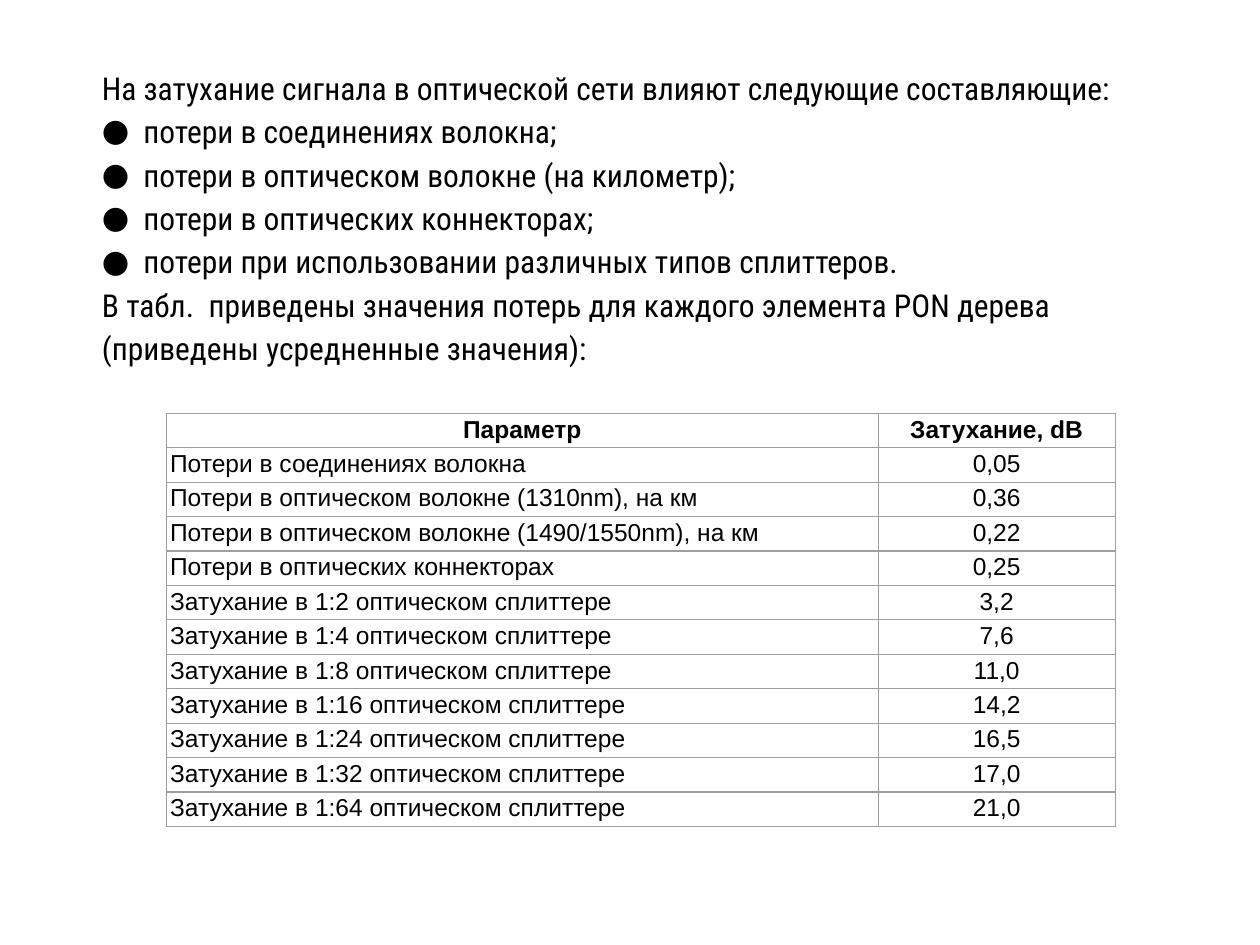
"""Build a slide on signal attenuation in an optical network."""
import pptx
import pptx.dml.color
import pptx.enum.text
import pptx.oxml
import pptx.oxml.ns
import pptx.util

Inches = pptx.util.Inches
ALIGN = pptx.enum.text.PP_ALIGN
BLACK = pptx.dml.color.RGBColor(0x00, 0x00, 0x00)
GREY = pptx.dml.color.RGBColor(0x9E, 0x9E, 0x9E)
NS = pptx.oxml.ns.nsdecls("a")

BODY = [
    ("На затухание сигнала в оптической сети влияют следующие составляющие:", False),
    ("потери в соединениях волокна;", True),
    ("потери в оптическом волокне (на километр);", True),
    ("потери в оптических коннекторах;", True),
    ("потери при использовании различных типов сплиттеров.", True),
    ("В табл.  приведены значения потерь для каждого элемента PON дерева "
     "(приведены усредненные значения):", False),
]
HEADER = ("Параметр", "Затухание, dB")
FIBRE_LOSSES = [
    ("Потери в соединениях волокна", "0,05"),
    ("Потери в оптическом волокне (1310nm), на км", "0,36"),
    ("Потери в оптическом волокне (1490/1550nm), на км", "0,22"),
    ("Потери в оптических коннекторах", "0,25"),
]
SPLITTER_LOSSES = [(2, "3,2"), (4, "7,6"), (8, "11,0"), (16, "14,2"),
                   (24, "16,5"), (32, "17,0"), (64, "21,0")]
COL_WIDTHS = (5.65, 1.88)
TABLE_HEIGHT = 3.22


def write(p, text, font="Arial", size=14, bold=False, align=None,
          spacing=None, margin=0, indent=0, bullet=None):
    pPr = p._p.get_or_add_pPr()
    if margin:
        pPr.set("marL", str(Inches(margin)))
        pPr.set("indent", str(Inches(indent)))
    if bullet:
        for xml in (f'<a:buClr {NS}><a:srgbClr val="{BLACK}"/></a:buClr>',
                    f'<a:buFont {NS} typeface="{font}"/>',
                    f'<a:buChar {NS} char="{bullet}"/>'):
            pPr.append(pptx.oxml.parse_xml(xml))
    p.alignment = align
    p.line_spacing = spacing
    r = p.add_run()
    r.text = text
    r.font.name = font
    r.font.size = pptx.util.Pt(size)
    r.font.bold = bold
    r.font.color.rgb = BLACK


def add_borders(cell):
    tcPr = cell._tc.get_or_add_tcPr()
    for side in ("lnL", "lnR", "lnT", "lnB"):
        tcPr.append(pptx.oxml.parse_xml(
            f'<a:{side} {NS} w="{pptx.util.Pt(0.75)}"><a:solidFill>'
            f'<a:srgbClr val="{GREY}"/></a:solidFill></a:{side}>'))


def add_body(s):
    tf = s.shapes.add_textbox(Inches(0.54), Inches(0.4),
                              Inches(8.88), Inches(2.54)).text_frame
    tf.word_wrap = True
    tf.margin_left = tf.margin_right = Inches(0.1)
    tf.margin_top = tf.margin_bottom = Inches(0.1)
    for i, (text, bulleted) in enumerate(BODY):
        p = tf.add_paragraph() if i else tf.paragraphs[0]
        layout = (dict(margin=0.5, indent=-0.33, bullet="●") if bulleted
                  else dict(margin=0.17))
        write(p, text, font="Roboto Condensed", size=18, spacing=1.15, **layout)


def add_losses(s):
    rows = [HEADER, *FIBRE_LOSSES]
    rows += [(f"Затухание в 1:{n} оптическом сплиттере", loss)
             for n, loss in SPLITTER_LOSSES]
    table = s.shapes.add_table(len(rows), len(COL_WIDTHS), Inches(1.32), Inches(3.28),
                               Inches(sum(COL_WIDTHS)), Inches(TABLE_HEIGHT)).table
    table.horz_banding = False
    for col, width in zip(table.columns, COL_WIDTHS):
        col.width = Inches(width)
    for i, row in enumerate(rows):
        table.rows[i].height = Inches(TABLE_HEIGHT / len(rows))
        for j, text in enumerate(row):
            cell = table.cell(i, j)
            cell.margin_left = cell.margin_right = Inches(0.03)
            cell.margin_top = cell.margin_bottom = Inches(0.02)
            add_borders(cell)
            cell.fill.background()
            align = ALIGN.JUSTIFY if i and not j else ALIGN.CENTER
            write(cell.text_frame.paragraphs[0], text, bold=i == 0, align=align)


def main():
    prs = pptx.Presentation()
    prs.slide_width, prs.slide_height = Inches(10), Inches(7.5)
    s = prs.slides.add_slide(prs.slide_layouts[6])
    add_body(s)
    add_losses(s)
    prs.save("out.pptx")


if __name__ == "__main__":
    main()
